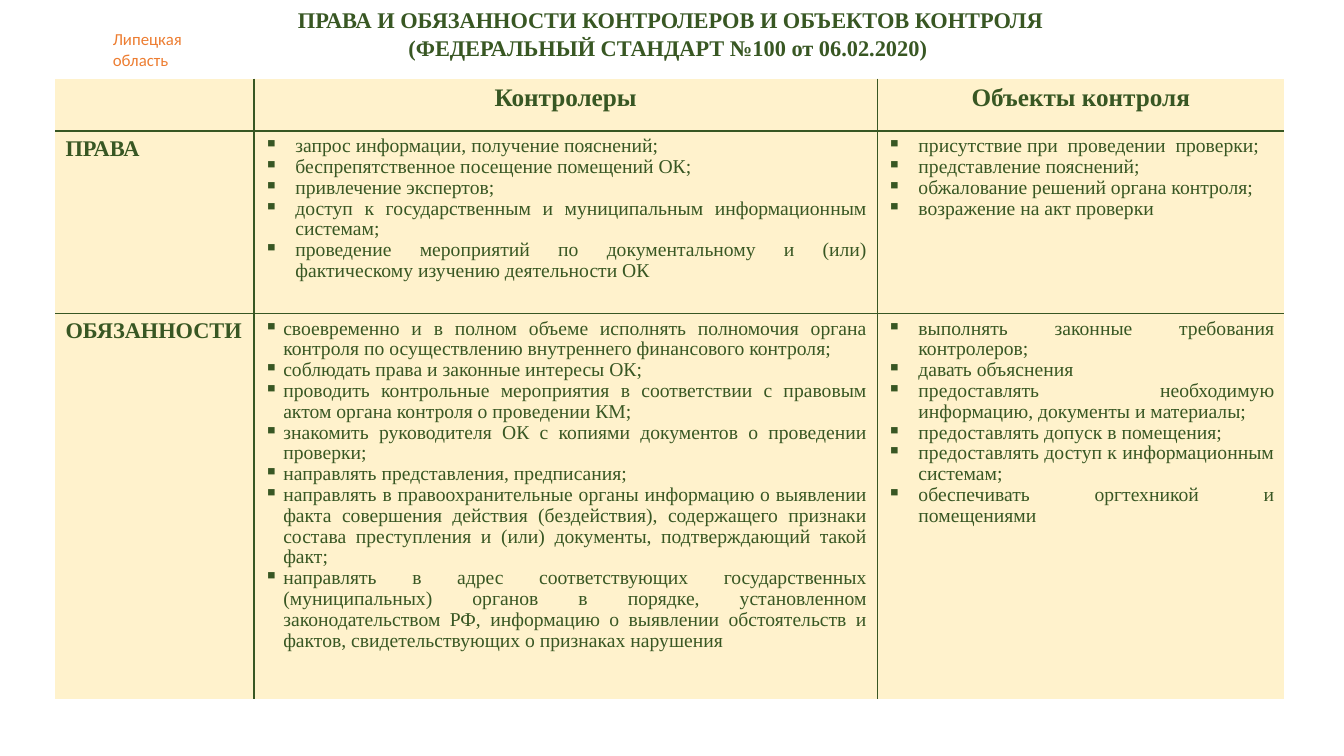
from dataclasses import dataclass

from lxml.etree import SubElement
from pptx import Presentation
from pptx.dml.color import RGBColor
from pptx.enum.text import PP_ALIGN as Align
from pptx.oxml.ns import qn
from pptx.util import Inches, Pt

COLORS = {"green": "385723", "cream": "FFF2CC", "orange": "ED7D31"}
SERIF = "Times New Roman"
COLUMN_WIDTHS = (1.97, 6.18, 4.04)
ROW_HEIGHTS = (0.52, 1.81, 3.83)


@dataclass(frozen=True)
class Style:
    size: float
    color: str = "green"
    font: str = SERIF
    bold: bool = True
    align: Align = Align.LEFT
    spacing: float | None = None
    indent: float = 0


@dataclass(frozen=True)
class Label:
    left: float
    top: float
    width: float
    height: float
    lines: tuple[str, ...]
    style: Style


@dataclass(frozen=True)
class Entry:
    lines: tuple[str, ...]
    style: Style


REGION = Style(12, "orange", "Calibri", bold=False)
TITLE = Style(16, align=Align.CENTER, spacing=1.05)
HEADING = Style(18, align=Align.CENTER)
ROW_NAME = Style(16)
WIDE_LIST = Style(14, bold=False, align=Align.JUSTIFY, spacing=0.96, indent=0.31)
TIGHT_LIST = Style(14, bold=False, align=Align.JUSTIFY, spacing=0.96, indent=0.19)

LABELS = (
    Label(1.02, 0.24, 0.91, 0.5, ("Липецкая", "область"), REGION),
    Label(0.98, 0, 11.4, 0.64, (
        "ПРАВА И ОБЯЗАННОСТИ КОНТРОЛЕРОВ И ОБЪЕКТОВ КОНТРОЛЯ ",
        "(ФЕДЕРАЛЬНЫЙ СТАНДАРТ №100 от 06.02.2020)  ",
    ), TITLE),
)

ENTRIES = (
    (
        Entry(("",), HEADING),
        Entry(("Контролеры",), HEADING),
        Entry(("Объекты контроля",), HEADING),
    ),
    (
        Entry(("ПРАВА",), ROW_NAME),
        Entry((
            "запрос информации, получение пояснений;",
            "беспрепятственное посещение помещений ОК;",
            "привлечение экспертов;",
            "доступ к государственным и муниципальным информационным системам; ",
            "проведение мероприятий по документальному и (или) фактическому изучению "
            "деятельности ОК",
        ), WIDE_LIST),
        Entry((
            "присутствие при  проведении  проверки;",
            "представление пояснений;",
            "обжалование решений органа контроля;",
            "возражение на акт проверки",
        ), WIDE_LIST),
    ),
    (
        Entry(("ОБЯЗАННОСТИ",), ROW_NAME),
        Entry((
            "своевременно и в полном объеме исполнять полномочия органа контроля по "
            "осуществлению внутреннего финансового контроля;",
            "соблюдать права и законные интересы ОК;",
            "проводить контрольные мероприятия в соответствии с правовым актом органа "
            "контроля о проведении КМ;",
            "знакомить руководителя ОК с копиями документов о проведении проверки;",
            "направлять представления, предписания;",
            "направлять в правоохранительные органы информацию о выявлении факта "
            "совершения действия (бездействия), содержащего признаки состава "
            "преступления и (или) документы, подтверждающий такой факт;",
            "направлять в адрес соответствующих государственных (муниципальных) "
            "органов в порядке, установленном законодательством РФ, информацию о "
            "выявлении обстоятельств и фактов, свидетельствующих о признаках нарушения",
        ), TIGHT_LIST),
        Entry((
            "выполнять законные требования контролеров;",
            "давать объяснения",
            "предоставлять необходимую информацию, документы и материалы;",
            "предоставлять допуск в помещения;",
            "предоставлять доступ к информационным системам;",
            "обеспечивать оргтехникой и помещениями",
        ), WIDE_LIST),
    ),
)


def rgb(name: str) -> RGBColor:
    return RGBColor.from_string(COLORS[name])


def add_bullet(para, indent: float) -> None:
    properties = para._p.get_or_add_pPr()
    properties.set("marL", str(Inches(indent)))
    properties.set("indent", str(-Inches(indent)))
    SubElement(properties, qn("a:buChar"), char="▪")


def write_lines(frame, lines: tuple[str, ...], style: Style) -> None:
    frame.text = "\n".join(lines)
    for para in frame.paragraphs:
        if style.indent:
            add_bullet(para, style.indent)
        para.alignment = style.align
        if style.spacing:
            para.line_spacing = style.spacing
        for span in para.runs:
            span.font.name = style.font
            span.font.size = Pt(style.size)
            span.font.bold = style.bold
            span.font.color.rgb = rgb(style.color)


def add_label(page, label: Label) -> None:
    box = page.shapes.add_textbox(Inches(label.left), Inches(label.top),
                                  Inches(label.width), Inches(label.height))
    box.text_frame.word_wrap = True
    write_lines(box.text_frame, label.lines, label.style)


def add_borders(cell, row: int, column: int) -> None:
    """Rule the edges shared with neighbours and leave the outer edges open."""
    last_row, last_column = len(ROW_HEIGHTS) - 1, len(COLUMN_WIDTHS) - 1
    edges = {"L": column > 0, "R": column < last_column,
             "T": row > 0, "B": row < last_row}
    properties = cell._tc.get_or_add_tcPr()
    for side, ruled in edges.items():
        line = SubElement(properties, qn(f"a:ln{side}"), w=str(Pt(1)))
        if ruled:
            fill = SubElement(line, qn("a:solidFill"))
            SubElement(fill, qn("a:srgbClr"), val=COLORS["green"])
        else:
            SubElement(line, qn("a:noFill"))


def add_duties_table(page) -> None:
    table = page.shapes.add_table(
        len(ROW_HEIGHTS), len(COLUMN_WIDTHS), Inches(0.55), Inches(0.78),
        Inches(sum(COLUMN_WIDTHS)), Inches(sum(ROW_HEIGHTS))).table
    table.horz_banding = False
    table.first_row = False
    for column, width in zip(table.columns, COLUMN_WIDTHS):
        column.width = Inches(width)
    for row, height in zip(table.rows, ROW_HEIGHTS):
        row.height = Inches(height)
    for row, entries in enumerate(ENTRIES):
        for column, entry in enumerate(entries):
            cell = table.cell(row, column)
            add_borders(cell, row, column)
            cell.fill.solid()
            cell.fill.fore_color.rgb = rgb("cream")
            write_lines(cell.text_frame, entry.lines, entry.style)


def main() -> None:
    deck = Presentation()
    deck.slide_width, deck.slide_height = Inches(13.33), Inches(7.5)
    page = deck.slides.add_slide(deck.slide_layouts[6])
    for label in LABELS:
        add_label(page, label)
    add_duties_table(page)
    deck.save("out.pptx")


if __name__ == "__main__":
    main()
